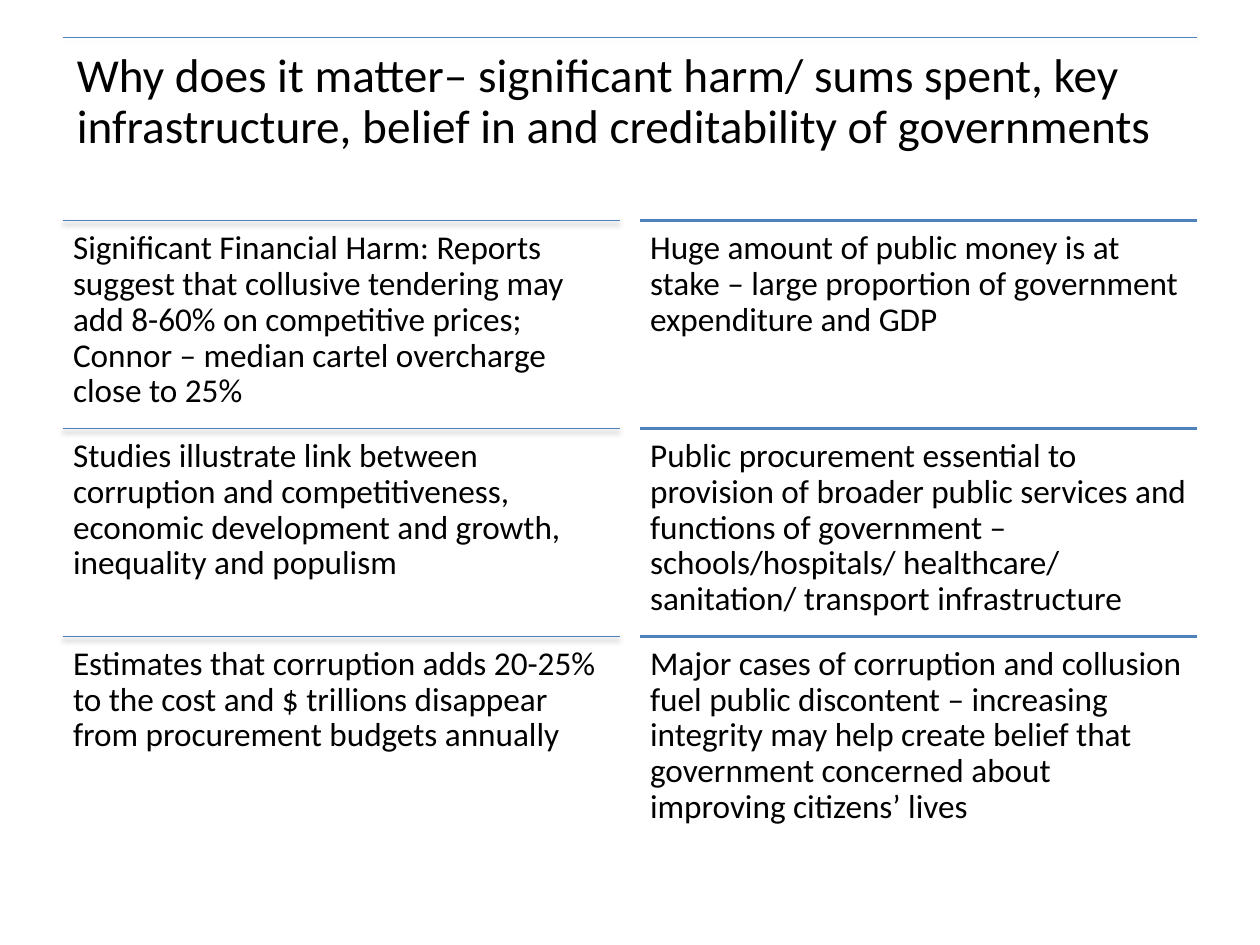
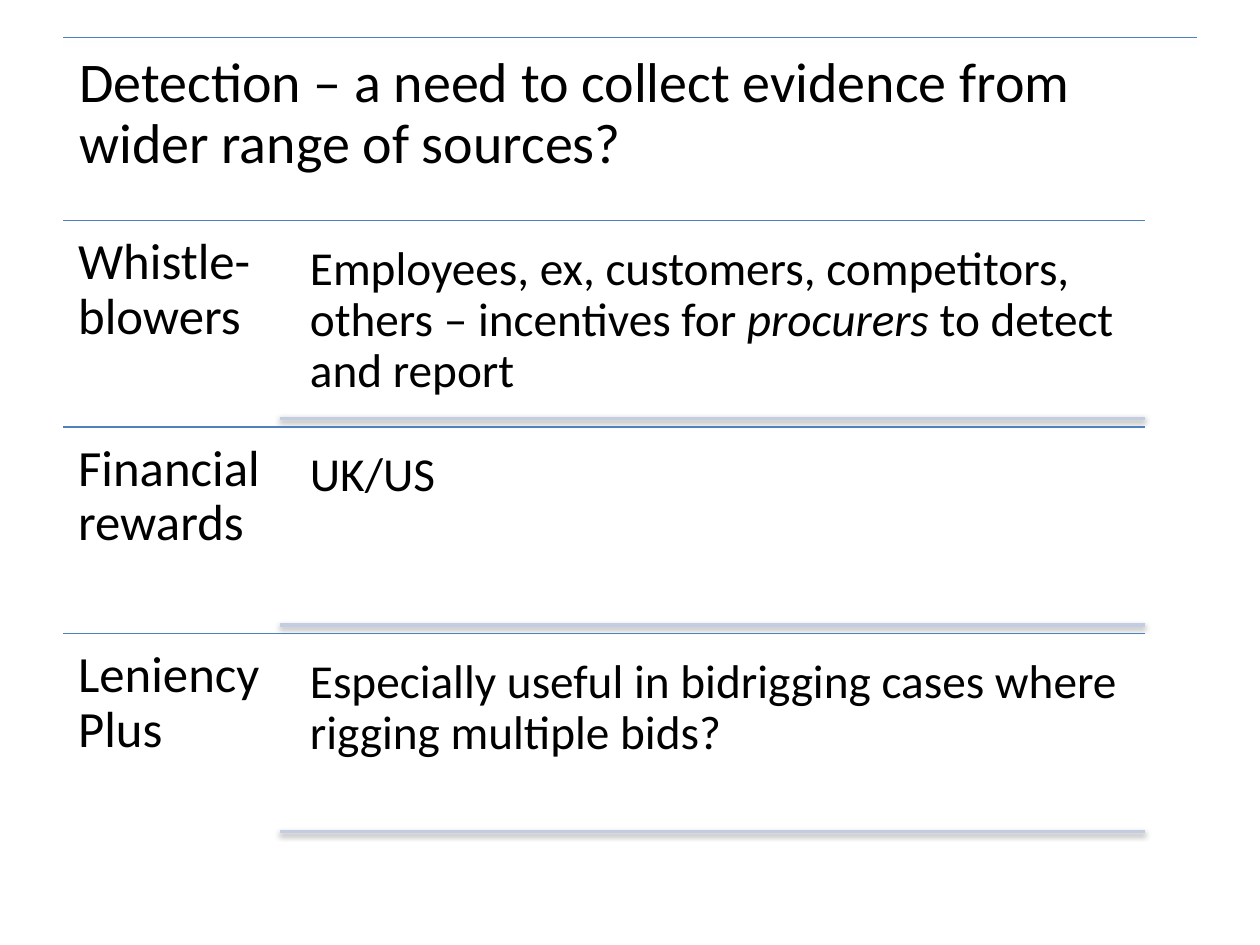
from dataclasses import dataclass

from lxml import etree
from pptx import Presentation
from pptx.dml.color import RGBColor
from pptx.enum.shapes import MSO_CONNECTOR
from pptx.enum.text import MSO_ANCHOR, PP_ALIGN
from pptx.oxml.ns import qn
from pptx.presentation import Presentation as PresentationType
from pptx.slide import Slide
from pptx.util import Inches, Pt

STRAIGHT = MSO_CONNECTOR.STRAIGHT
TOP = MSO_ANCHOR.TOP
LEFT = PP_ALIGN.LEFT

BLUE = RGBColor(0x4F, 0x81, 0xBD)
PALE_BLUE = RGBColor(0xC2, 0xCD, 0xE1)
BLACK = RGBColor(0, 0, 0)
FONT = "Calibri"
BLANK_LAYOUT = 6

MARGIN = 0.5
TITLE_TOP, TITLE_WIDTH, TITLE_HEIGHT = 0.3, 9.0, 1.25
BODY_TOP = 1.75


@dataclass(frozen=True)
class Shadow:
    """A black shadow straight below; lengths in points, opacity in percent."""
    opacity: int
    blur: float
    distance: float


@dataclass(frozen=True)
class RuleStyle:
    color: RGBColor
    weight: float
    shadow: Shadow | None = None


@dataclass(frozen=True)
class TextStyle:
    size: int
    inset: float


@dataclass(frozen=True)
class ReasonColumn:
    left: float
    rule: RuleStyle
    reasons: tuple[str, ...]


@dataclass(frozen=True)
class EvidenceSource:
    name: str
    detail: str
    emphasis: str = ""


THIN_RULE = RuleStyle(BLUE, 0.75, Shadow(35, 3.1, 1.8))
THICK_RULE = RuleStyle(BLUE, 2)
PALE_RULE = RuleStyle(PALE_BLUE, 2, Shadow(38, 3.1, 1.6))

LONG_TITLE = TextStyle(27, 0.11)
SHORT_TITLE = TextStyle(32, 0.13)
REASON_TEXT = TextStyle(19, 0.08)
SOURCE_TEXT = TextStyle(29, 0.12)
DETAIL_TEXT = TextStyle(27, 0.11)

REASON_WIDTH, REASON_HEIGHT = 4.42, 1.65
REASON_COLUMNS = (
    ReasonColumn(MARGIN, THIN_RULE, (
        "Significant Financial Harm: Reports suggest that collusive tendering "
        "may add 8-60% on competitive prices; Connor – median cartel "
        "overcharge close to 25%",
        "Studies illustrate link between corruption and competitiveness, "
        "economic development and growth, inequality and populism",
        "Estimates that corruption adds 20-25% to the cost and $ trillions "
        "disappear from procurement budgets annually",
    )),
    ReasonColumn(MARGIN + TITLE_WIDTH - REASON_WIDTH, THICK_RULE, (
        "Huge amount of public money is at stake – large proportion of "
        "government expenditure and GDP",
        "Public procurement essential to provision of broader public services "
        "and functions of government – schools/hospitals/ healthcare/ "
        "sanitation/ transport infrastructure",
        "Major cases of corruption and collusion fuel public discontent – "
        "increasing integrity may help create belief that government concerned "
        "about improving citizens’ lives",
    )),
)

SOURCE_WIDTH, SOURCE_HEIGHT = 1.72, 1.64
DETAIL_LEFT, DETAIL_WIDTH, DETAIL_HEIGHT = 2.35, 6.75, 1.49
DETAIL_GAP = 0.08
SOURCES_RIGHT = 9.09
EVIDENCE_SOURCES = (
    EvidenceSource(
        "Whistle-blowers",
        "Employees, ex, customers, competitors, others – incentives for "
        "procurers to detect and report",
        emphasis="procurers",
    ),
    EvidenceSource("Financial rewards", "UK/US"),
    EvidenceSource(
        "Leniency Plus",
        "Especially useful in bidrigging cases where rigging multiple bids?",
    ),
)


def add_rule(slide: Slide, left: float, right: float, top: float, style: RuleStyle) -> None:
    rule = slide.shapes.add_connector(
        STRAIGHT, Inches(left), Inches(top), Inches(right), Inches(top))
    rule.line.color.rgb = style.color
    rule.line.width = Pt(style.weight)
    effects = etree.SubElement(rule._element.spPr, qn("a:effectLst"))
    if style.shadow:
        outer = etree.SubElement(
            effects, qn("a:outerShdw"), blurRad=str(Pt(style.shadow.blur)),
            dist=str(Pt(style.shadow.distance)), dir="5400000", rotWithShape="0")
        color = etree.SubElement(outer, qn("a:srgbClr"), val=str(BLACK))
        etree.SubElement(color, qn("a:alpha"), val=str(style.shadow.opacity * 1000))


def add_text(slide: Slide, left: float, top: float, width: float, height: float,
             text: str, style: TextStyle, emphasis: str = "") -> None:
    """Add a top-left text box, with the emphasis phrase in italics."""
    box = slide.shapes.add_textbox(
        Inches(left), Inches(top), Inches(width), Inches(height))
    text_frame = box.text_frame
    text_frame.word_wrap = True
    text_frame.vertical_anchor = TOP
    text_frame.margin_left = text_frame.margin_right = Inches(style.inset)
    text_frame.margin_top = text_frame.margin_bottom = Inches(style.inset)
    paragraph = text_frame.paragraphs[0]
    paragraph.alignment = LEFT
    paragraph.line_spacing = 0.9
    if emphasis:
        for part in text.partition(emphasis):
            run = paragraph.add_run()
            run.text = part
            run.font.italic = part == emphasis
    else:
        paragraph.text = text
    for run in paragraph.runs:
        run.font.name = FONT
        run.font.size = Pt(style.size)
        run.font.color.rgb = BLACK


def add_titled_slide(presentation: PresentationType, title: str, style: TextStyle) -> Slide:
    slide = presentation.slides.add_slide(presentation.slide_layouts[BLANK_LAYOUT])
    add_rule(slide, MARGIN, MARGIN + TITLE_WIDTH, TITLE_TOP, THIN_RULE)
    add_text(slide, MARGIN, TITLE_TOP, TITLE_WIDTH, TITLE_HEIGHT, title, style)
    return slide


def add_reasons_slide(presentation: PresentationType) -> None:
    slide = add_titled_slide(
        presentation,
        "Why does it matter– significant harm/ sums spent, key infrastructure, "
        "belief in and creditability of governments",
        LONG_TITLE)
    for column in REASON_COLUMNS:
        for row, reason in enumerate(column.reasons):
            top = BODY_TOP + row * REASON_HEIGHT
            add_rule(slide, column.left, column.left + REASON_WIDTH, top, column.rule)
            add_text(slide, column.left, top, REASON_WIDTH, REASON_HEIGHT,
                     reason, REASON_TEXT)


def add_detection_slide(presentation: PresentationType) -> None:
    slide = add_titled_slide(
        presentation,
        "Detection – a need to collect evidence from wider range of sources?",
        SHORT_TITLE)
    for row, source in enumerate(EVIDENCE_SOURCES):
        top = BODY_TOP + row * SOURCE_HEIGHT
        detail_top = top + DETAIL_GAP
        add_rule(slide, MARGIN, SOURCES_RIGHT, top, THIN_RULE)
        add_text(slide, MARGIN, top, SOURCE_WIDTH, SOURCE_HEIGHT,
                 source.name, SOURCE_TEXT)
        add_text(slide, DETAIL_LEFT, detail_top, DETAIL_WIDTH, DETAIL_HEIGHT,
                 source.detail, DETAIL_TEXT, source.emphasis)
        add_rule(slide, MARGIN + SOURCE_WIDTH, SOURCES_RIGHT,
                 detail_top + DETAIL_HEIGHT, PALE_RULE)


def main() -> None:
    presentation = Presentation()
    presentation.slide_width = Inches(10)
    presentation.slide_height = Inches(7.5)
    add_reasons_slide(presentation)
    add_detection_slide(presentation)
    presentation.save("out.pptx")


if __name__ == "__main__":
    main()
